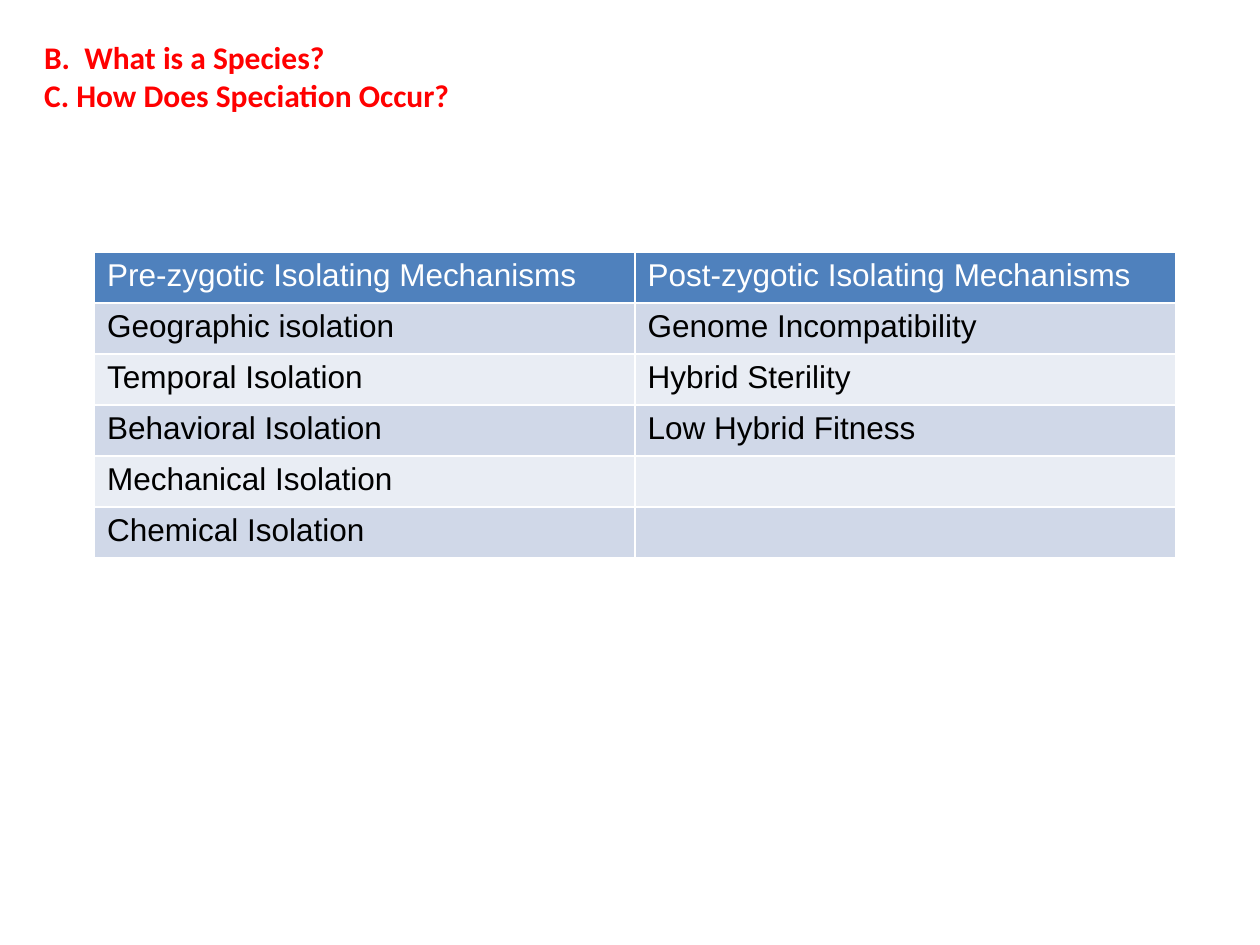
"""Build a slide comparing pre-zygotic and post-zygotic isolating mechanisms."""
from pptx import Presentation
from pptx import util as u
from pptx.dml.color import RGBColor
from pptx.enum import text

HEADINGS = ["B.  What is a Species?", "C. How Does Speciation Occur?"]
MECHANISMS = [
    ("Pre-zygotic Isolating Mechanisms", "Post-zygotic Isolating Mechanisms"),
    ("Geographic isolation", "Genome Incompatibility"),
    ("Temporal Isolation", "Hybrid Sterility"),
    ("Behavioral Isolation", "Low Hybrid Fitness"),
    ("Mechanical Isolation", ""),
    ("Chemical Isolation", ""),
]
THEME = {
    "heading": {"name": "Calibri", "size": u.Pt(18), "bold": True, "color": "FF0000"},
    "header": {"name": "Arial", "size": u.Pt(18), "bold": False, "color": "FFFFFF"},
    "body": {"name": "Arial", "size": u.Pt(18), "bold": False, "color": "000000"},
    "header_fill": "4F81BD",
    "band_fills": ("D0D8E8", "E9EDF4"),
}
HEADING_BOX = {"left": 0.25, "top": 0.25, "width": 9.42, "height": 0.71}
TABLE_BOX = (0.75, 2, 8.58, 2.43)
HANGING_INDENT = u.Inches(0.38)


def style_font(font, style):
    for name, value in style.items():
        if name == "color":
            font.color.rgb = RGBColor.from_string(value)
        else:
            setattr(font, name, value)


def add_headings(slide):
    title = slide.shapes.title
    for name, value in HEADING_BOX.items():
        setattr(title, name, u.Inches(value))
    frame = title.text_frame
    frame.text = "\n".join(HEADINGS)
    frame_format = {
        "word_wrap": True,
        "vertical_anchor": text.MSO_ANCHOR.TOP,
        "auto_size": text.MSO_AUTO_SIZE.SHAPE_TO_FIT_TEXT,
    }
    for name, value in frame_format.items():
        setattr(frame, name, value)
    for paragraph in frame.paragraphs:
        paragraph.alignment = text.PP_ALIGN.LEFT
        properties = paragraph._p.get_or_add_pPr()
        properties.set("marL", str(HANGING_INDENT))
        properties.set("indent", str(-HANGING_INDENT))
        style_font(paragraph.runs[0].font, THEME["heading"])


def add_mechanisms(slide):
    box = [u.Inches(value) for value in TABLE_BOX]
    table = slide.shapes.add_table(len(MECHANISMS), len(MECHANISMS[0]), *box).table
    for row_index, row in enumerate(MECHANISMS):
        is_header = row_index == 0
        fill = THEME["header_fill"] if is_header else THEME["band_fills"][(row_index - 1) % 2]
        for column_index, label in enumerate(row):
            cell = table.cell(row_index, column_index)
            cell.fill.solid()
            cell.fill.fore_color.rgb = RGBColor.from_string(fill)
            if label:
                cell.text = label
                font = cell.text_frame.paragraphs[0].runs[0].font
                style_font(font, THEME["header" if is_header else "body"])


def main():
    presentation = Presentation()
    presentation.slide_width = u.Inches(10)
    presentation.slide_height = u.Inches(7.5)
    slide = presentation.slides.add_slide(presentation.slide_layouts.get_by_name("Title Only"))
    add_headings(slide)
    add_mechanisms(slide)
    presentation.save("out.pptx")


if __name__ == "__main__":
    main()
